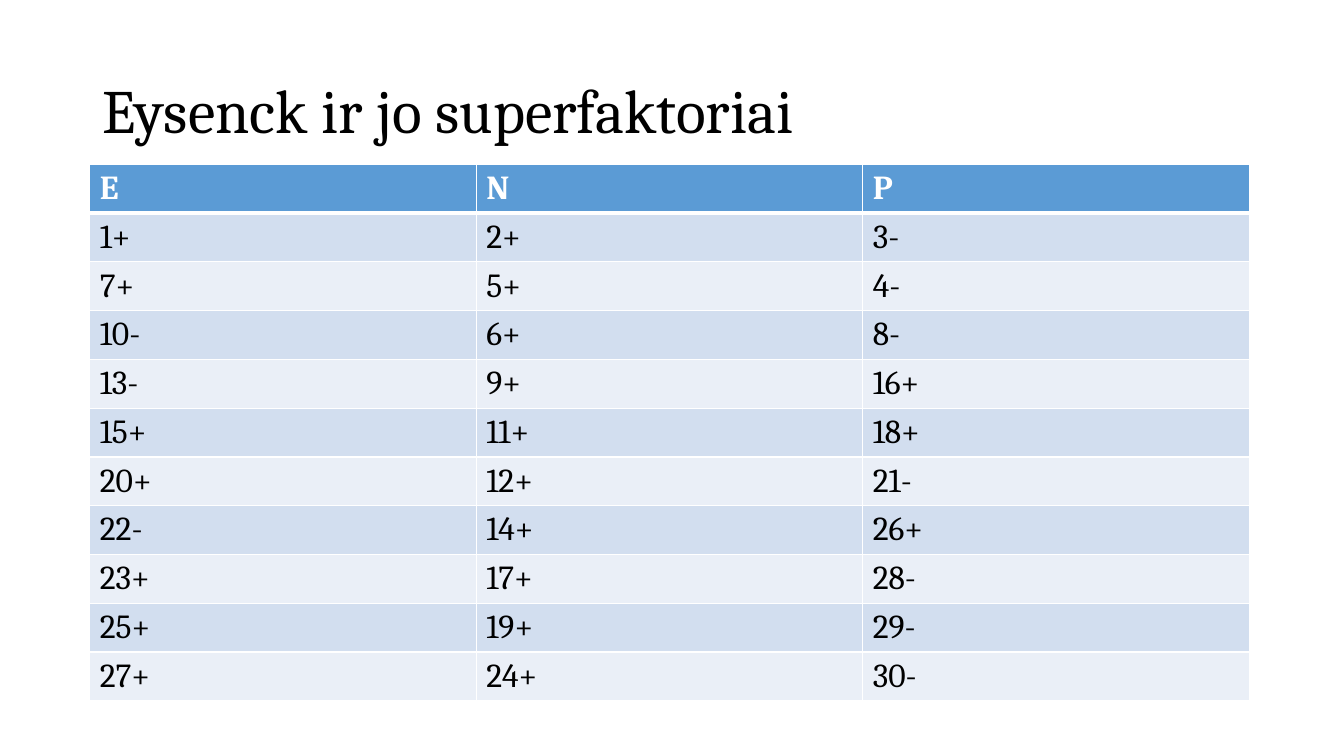
from pptx import Presentation
from pptx.dml.color import RGBColor
from pptx.enum.text import MSO_ANCHOR, PP_ALIGN
from pptx.oxml import parse_xml
from pptx.oxml.ns import nsdecls
from pptx.util import Inches, Pt

FONT = "Cambria"
BLACK, WHITE = "000000", "FFFFFF"
HEADER_FILL = "5B9BD5"
BAND_FILLS = ("EAEFF7", "D2DEEF")  # even rows, odd rows

FACTOR_ITEMS = {
    "E": "1+ 7+ 10- 13- 15+ 20+ 22- 23+ 25+ 27+".split(),
    "N": "2+ 5+ 6+ 9+ 11+ 12+ 14+ 17+ 19+ 24+".split(),
    "P": "3- 4- 8- 16+ 18+ 21- 26+ 28- 29- 30-".split(),
}


def color(hex_value):
    return RGBColor.from_string(hex_value)


def set_attributes(target, values):
    for name, value in values.items():
        setattr(target, name, value)


def write_text(text_frame, text, size, text_color, bold=False):
    paragraph = text_frame.paragraphs[0]
    run = paragraph.add_run()
    run.text = text
    set_attributes(run.font, {"name": FONT, "size": Pt(size), "bold": bold})
    run.font.color.rgb = color(text_color)
    return paragraph


def add_title(slide, text):
    title = slide.shapes.title
    set_attributes(title, {
        "left": Inches(0.92), "top": Inches(0.4),
        "width": Inches(11.5), "height": Inches(1.45),
    })
    set_attributes(title.text_frame, {
        "vertical_anchor": MSO_ANCHOR.MIDDLE, "word_wrap": True,
    })
    paragraph = write_text(title.text_frame, text, 44, BLACK)
    set_attributes(paragraph, {"alignment": PP_ALIGN.LEFT, "line_spacing": 0.9})


def set_borders(cell, bottom_width):
    properties = cell._tc.get_or_add_tcPr()
    widths = {"lnL": 1, "lnR": 1, "lnT": 1, "lnB": bottom_width}
    # Borders come before the fill in the cell properties
    for position, (tag, width) in enumerate(widths.items()):
        properties.insert(position, parse_xml(
            f'<a:{tag} {nsdecls("a")} w="{Pt(width)}"><a:solidFill>'
            f'<a:srgbClr val="{WHITE}"/></a:solidFill></a:{tag}>'
        ))


def format_cell(cell, text, is_header, band):
    write_text(cell.text_frame, text, 24, WHITE if is_header else BLACK, is_header)
    cell.fill.solid()
    cell.fill.fore_color.rgb = color(HEADER_FILL if is_header else BAND_FILLS[band])
    set_borders(cell, 3 if is_header else 1)


def add_factor_table(slide, factors):
    rows = [list(factors), *zip(*factors.values())]
    frame = slide.shapes.add_table(
        len(rows), len(factors),
        Inches(0.89), Inches(1.63), Inches(11.5), Inches(5.5),
    )
    table = frame.table
    for row_index, row in enumerate(rows):
        table.rows[row_index].height = Inches(0.41)
        for column_index, text in enumerate(row):
            cell = table.cell(row_index, column_index)
            format_cell(cell, text, row_index == 0, row_index % 2)
    frame.height = Inches(5.5)


def main():
    presentation = Presentation()
    set_attributes(presentation, {
        "slide_width": Inches(13.33), "slide_height": Inches(7.5),
    })
    # Title-only layout
    slide = presentation.slides.add_slide(presentation.slide_layouts[5])
    add_title(slide, "Eysenck ir jo superfaktoriai")
    add_factor_table(slide, FACTOR_ITEMS)
    presentation.save("out.pptx")


if __name__ == "__main__":
    main()
